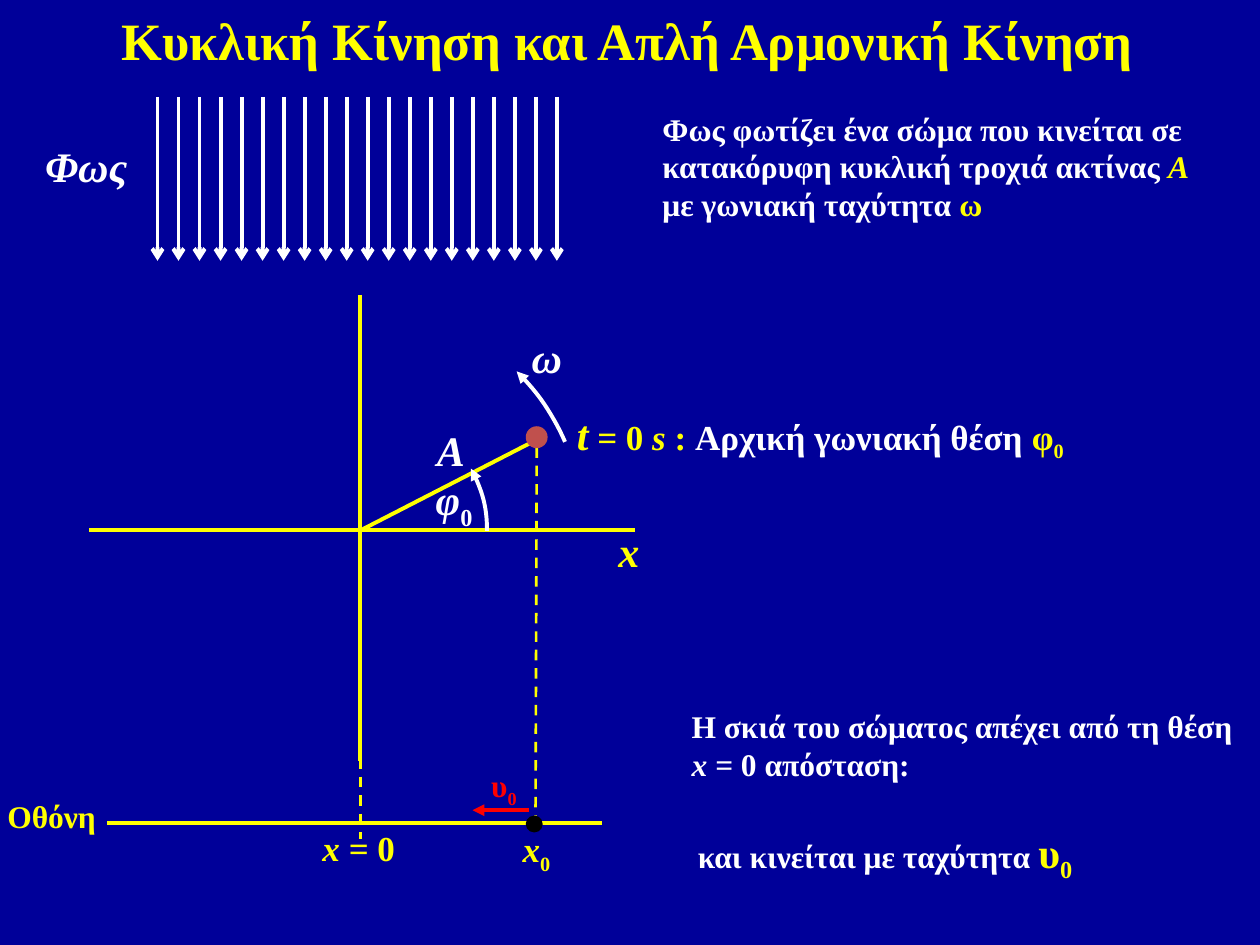
from dataclasses import dataclass

import pptx
import pptx.dml.color
import pptx.enum.dml
import pptx.enum.shapes
import pptx.enum.text
import pptx.oxml.ns
import pptx.util
from lxml import etree
from pptx.util import Inches

FONT = "Times New Roman"
COLORS = {
    "background": "000099",
    "yellow": "FFFF00",
    "white": "FFFFFF",
    "red": "FF0000",
    "body": "C0504D",
    "shadow": "000000",
}
SHAPES = pptx.enum.shapes.MSO_SHAPE


@dataclass
class Box:
    left: float
    top: float
    width: float
    height: float

    def at(self, x, y):
        return Inches(self.left + x), Inches(self.top + y)


def rgb(name):
    return pptx.dml.color.RGBColor.from_string(COLORS[name])


def add_run(paragraph, text, size, color, italic=False, sub=False):
    run = paragraph.add_run()
    run.text = text
    font = run.font
    font.name, font.size, font.bold, font.italic = FONT, pptx.util.Pt(size), True, italic
    font.color.rgb = rgb(color)
    if sub:
        run._r.get_or_add_rPr().set("baseline", "-25000")


def add_text(slide, box, x, y, width, height, runs, wrap=False):
    label = slide.shapes.add_textbox(*box.at(x, y), Inches(width), Inches(height))
    label.text_frame.word_wrap = wrap
    for run in runs:
        add_run(label.text_frame.paragraphs[0], *run)


def style_line(line, color, weight=2.25, arrow=None, end="tailEnd"):
    line.color.rgb = rgb(color)
    line.width = pptx.util.Pt(weight)
    if arrow:
        etree.SubElement(line._get_or_add_ln(), pptx.oxml.ns.qn(f"a:{end}"), type=arrow)


def add_line(slide, box, start, end, color, weight=2.25, arrow=None, dashed=False):
    connector = slide.shapes.add_connector(
        pptx.enum.shapes.MSO_CONNECTOR.STRAIGHT, *box.at(*start), *box.at(*end))
    if dashed:
        connector.line.dash_style = pptx.enum.dml.MSO_LINE.DASH
    style_line(connector.line, color, weight, arrow)
    etree.SubElement(connector._element.spPr, pptx.oxml.ns.qn("a:effectLst"))


def add_round(slide, box, center, diameter, preset):
    corner = [c - diameter / 2 for c in center]
    shape = slide.shapes.add_shape(
        preset, *box.at(*corner), Inches(diameter), Inches(diameter))
    shape.shadow.inherit = False
    return shape


def add_dot(slide, box, center, diameter, color):
    dot = add_round(slide, box, center, diameter, SHAPES.OVAL)
    dot.fill.solid()
    dot.fill.fore_color.rgb = rgb(color)
    style_line(dot.line, color, 1)


def add_arc(slide, box, center, diameter, angles):
    arc = add_round(slide, box, center, diameter, SHAPES.ARC)
    for index, degrees in enumerate(angles):
        arc.adjustments[index] = degrees * 0.6  # 60000ths of a degree over 100000
    arc.fill.background()
    style_line(arc.line, "white", arrow="triangle", end="headEnd")


def build_title(slide, box):
    title = slide.shapes.title
    title.left, title.top = box.at(0, 0)
    title.width, title.height = Inches(box.width), Inches(box.height)
    frame = title.text_frame
    frame.auto_size = pptx.enum.text.MSO_AUTO_SIZE.NONE
    frame.vertical_anchor = pptx.enum.text.MSO_ANCHOR.MIDDLE
    heading = frame.paragraphs[0]
    heading.alignment = pptx.enum.text.PP_ALIGN.CENTER
    heading.line_spacing = 0.9
    add_run(heading, "Κυκλική Κίνηση και Απλή Αρμονική Κίνηση", 30, "yellow")


def build_light(slide, box, rays=20):
    gap = box.width / (rays - 1)
    for ray in range(rays):
        add_line(slide, box, (ray * gap, 0), (ray * gap, box.height),
                 "white", arrow="arrow")
    add_text(slide, box, -0.99, 0.3, 0.86, 0.5, [("Φως", 24, "white", True)])


def build_circular_motion(slide, box):
    center = (2.15, 1.87)
    body = (3.55, 1.13)
    # Axes
    add_line(slide, box, (0, center[1]), (box.width, center[1]), "yellow")
    add_line(slide, box, (center[0], 0), (center[0], box.height), "yellow")
    add_text(slide, box, 4.1, 1.78, 0.37, 0.51, [("x", 24, "yellow", True)])
    # Radius and initial phase
    add_line(slide, box, center, (3.53, 1.16), "yellow")
    add_text(slide, box, 2.66, 0.98, 0.43, 0.5, [("Α", 24, "white", True)])
    add_arc(slide, box, center, 2.01, (330.74, 0.19))
    add_text(slide, box, 2.65, 1.37, 0.51, 0.51,
             [("φ", 24, "white", True), ("0", 24, "white", False, True)])
    # Angular velocity
    add_arc(slide, box, center, 3.54, (314.5, 336.6))
    add_text(slide, box, 3.41, 0.24, 0.45, 0.5, [("ω", 24, "white", True)])
    # Body and its starting moment
    add_line(slide, box, (3.55, 1.21), (3.54, 4.2), "yellow", 1.5, dashed=True)
    add_dot(slide, box, body, 0.16, "body")
    add_text(slide, box, 3.77, 0.85, 4.77, 0.5, [
        ("t", 24, "yellow", True), (" = ", 20, "yellow", True), ("0", 20, "yellow"),
        (" s ", 20, "yellow", True), (": ", 20, "yellow"),
        ("Αρχική γωνιακή θέση ", 20, "white"),
        ("φ", 20, "yellow"), ("0", 20, "yellow", False, True)], wrap=True)


def build_screen(slide, box):
    level = box.height
    add_line(slide, box, (0, level), (box.width, level), "yellow")
    add_text(slide, box, -0.89, 0.24, 0.91, 0.4, [("Οθόνη", 18, "yellow")])
    # Origin
    add_line(slide, box, (2.01, -1.19), (2.01, 0.62), "yellow", 1.5, dashed=True)
    add_text(slide, box, 1.61, 0.47, 0.85, 0.44,
             [("x = ", 20, "yellow", True), ("0", 20, "yellow")])
    # Shadow and its velocity
    add_dot(slide, box, (3.39, 0.5), 0.12, "shadow")
    add_text(slide, box, 3.2, 0.48, 0.51, 0.44,
             [("x", 20, "yellow", True), ("0", 20, "yellow", False, True)])
    add_line(slide, box, (3.35, 0.39), (2.9, 0.39), "red", arrow="triangle")
    add_text(slide, box, 2.95, -0.01, 0.42, 0.4,
             [("υ", 18, "red"), ("0", 18, "red", False, True)])


def build_setup_note(slide, box):
    add_text(slide, box, 0, 0, box.width, box.height, [
        ("Φως φωτίζει ένα σώμα που κινείται σε κατακόρυφη κυκλική τροχιά ακτίνας ",
         18, "white"),
        ("Α", 18, "yellow", True), (" με γωνιακή ταχύτητα ", 18, "white"),
        ("ω", 18, "yellow")], wrap=True)


def build_shadow_notes(slide, box):
    add_text(slide, box, 0, 0, box.width, 0.71, [
        ("Η σκιά του σώματος απέχει από τη θέση ", 18, "white"),
        ("x = ", 18, "white", True), ("0 απόσταση:", 18, "white")], wrap=True)
    add_text(slide, box, 0.05, 0.95, 3.34, 0.5, [
        ("και κινείται με ταχύτητα ", 18, "white"),
        ("υ", 24, "yellow"), ("0", 24, "yellow", False, True)])


def main():
    deck = pptx.Presentation()
    deck.slide_width, deck.slide_height = Inches(10), Inches(7.5)
    slide = deck.slides.add_slide(deck.slide_layouts[5])
    slide.background.fill.solid()
    slide.background.fill.fore_color.rgb = rgb("background")

    build_title(slide, Box(0.04, 0.13, 9.88, 0.43))
    build_light(slide, Box(1.25, 0.77, 3.17, 1.3))
    build_setup_note(slide, Box(5.16, 0.82, 4.57, 1.01))
    build_circular_motion(slide, Box(0.71, 2.34, 4.33, 3.7))
    build_screen(slide, Box(0.85, 6.04, 3.93, 0.49))
    build_shadow_notes(slide, Box(5.39, 5.56, 4.57, 1.45))
    deck.save("out.pptx")


if __name__ == "__main__":
    main()
